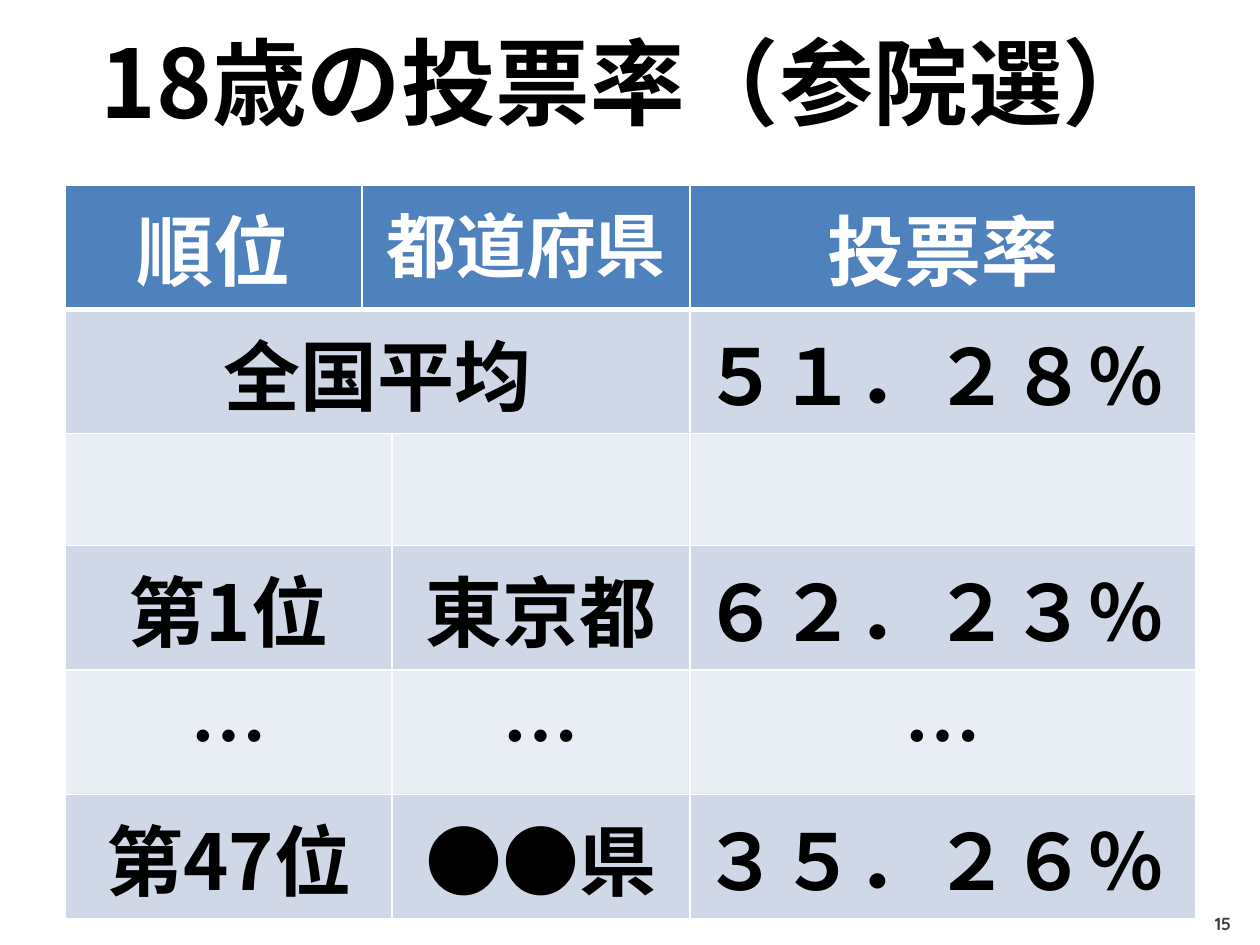
from dataclasses import dataclass

from lxml.etree import SubElement
from pptx import Presentation
from pptx.dml.color import RGBColor
from pptx.enum.shapes import MSO_SHAPE as Preset
from pptx.enum.text import MSO_ANCHOR as Anchor, PP_ALIGN as Align
from pptx.oxml.ns import qn
from pptx.util import Pt

EMU_PER_PX = 914400 / 126


def px(length):
    return round(length * EMU_PER_PX)


@dataclass(frozen=True)
class Theme:
    heading_font: str = "Noto Sans CJK JP"
    number_font: str = "Quicksand"
    paper: str = "FFFFFF"
    ink: str = "000000"
    muted: str = "404040"
    header: str = "4F81BD"
    bands: tuple = ("D0D8E8", "E9EDF4")
    title_size: int = 54
    body_size: int = 44
    compact_size: int = 40
    number_size: int = 10
    thin: int = 1
    thick: int = 3


class SlideBuilder:
    """Draws styled elements on the current slide."""

    def __init__(self, slide, theme):
        self.slide = slide
        self.theme = theme

    def label(self, frame, text, size, color, font, align=Align.CENTER):
        frame.text = text
        paragraph = frame.paragraphs[0]
        paragraph.alignment = align
        for run in paragraph.runs:
            run.font.size = Pt(size)
            run.font.bold = True
            run.font.color.rgb = RGBColor.from_string(color)
            run.font.name = font
            SubElement(run.font._element, qn("a:ea"), typeface=font)
        if not text:
            SubElement(paragraph._p, qn("a:endParaRPr"), sz=str(size * 100))

    def title(self, text, box):
        frame = self.slide.shapes.add_textbox(*map(px, box)).text_frame
        frame.word_wrap = True
        frame.vertical_anchor = Anchor.MIDDLE
        self.label(frame, text, self.theme.title_size, self.theme.ink,
                   self.theme.heading_font)

    def page_number(self, text, box):
        badge = self.slide.shapes.add_shape(Preset.RECTANGLE, *map(px, box))
        badge.shadow.inherit = False
        badge.fill.solid()
        badge.fill.fore_color.rgb = RGBColor.from_string(self.theme.paper)
        badge.line.fill.background()
        frame = badge.text_frame
        frame.word_wrap = False
        frame.vertical_anchor = Anchor.MIDDLE
        frame.margin_left = frame.margin_right = px(5)
        frame.margin_top = frame.margin_bottom = px(5)
        self.label(frame, text, self.theme.number_size, self.theme.muted,
                   self.theme.number_font)

    def borders(self, cell, top, bottom):
        properties = cell._tc.get_or_add_tcPr()
        thin = self.theme.thin
        for side, width in zip("LRTB", (thin, thin, top, bottom)):
            line = SubElement(properties, qn(f"a:ln{side}"), w=str(Pt(width)))
            fill = SubElement(line, qn("a:solidFill"))
            SubElement(fill, qn("a:srgbClr"), val=self.theme.paper)

    def table(self, rows, spans, corner, widths, heights):
        theme = self.theme
        box = (*corner, sum(widths), sum(heights))
        table = self.slide.shapes.add_table(
            len(heights), len(widths), *map(px, box)).table
        for column, width in zip(table.columns, widths):
            column.width = px(width)
        for row, height in zip(table.rows, heights):
            row.height = px(height)
        for r, (texts, (first, last)) in enumerate(zip(rows, spans)):
            table.cell(r, first).merge(table.cell(r, last))
            for c in range(len(widths)):
                cell = table.cell(r, c)
                self.borders(cell, theme.thick if r == 1 else theme.thin,
                             theme.thick if r == 0 else theme.thin)
                cell.fill.solid()
                cell.fill.fore_color.rgb = RGBColor.from_string(
                    theme.bands[(r - 1) % 2] if r else theme.header)
            starts = [c for c in range(len(widths)) if not first < c <= last]
            for c, text in zip(starts, texts):
                compact = r == 0 and c == first
                left = text.endswith("％")
                self.label(table.cell(r, c).text_frame, text,
                           theme.compact_size if compact else theme.body_size,
                           theme.ink if r else theme.paper, theme.heading_font,
                           Align.LEFT if left else Align.CENTER)


def main():
    deck = Presentation()
    deck.slide_width, deck.slide_height = px(1260), px(945)
    slide = deck.slides.add_slide(deck.slide_layouts[6])
    builder = SlideBuilder(slide, Theme())

    turnout = [
        ("順位", "都道府県", "投票率"),
        ("全国平均", "５１．２８％"),
        ("", "", ""),
        ("第1位", "東京都", "６２．２３％"),
        ("…", "…", "…"),
        ("第47位", "●●県", "３５．２６％"),
    ]
    spans = [(1, 2), (0, 2)] + [(0, 1)] * 4
    builder.page_number("15", (1186, 901, 74, 44))
    builder.table(turnout, spans, (65, 185), (297, 30, 298, 506),
                  (108, 112, 112, 108, 108, 108))
    builder.title("18歳の投票率（参院選）", (44, 26, 1170, 110))
    deck.save("out.pptx")


if __name__ == "__main__":
    main()
